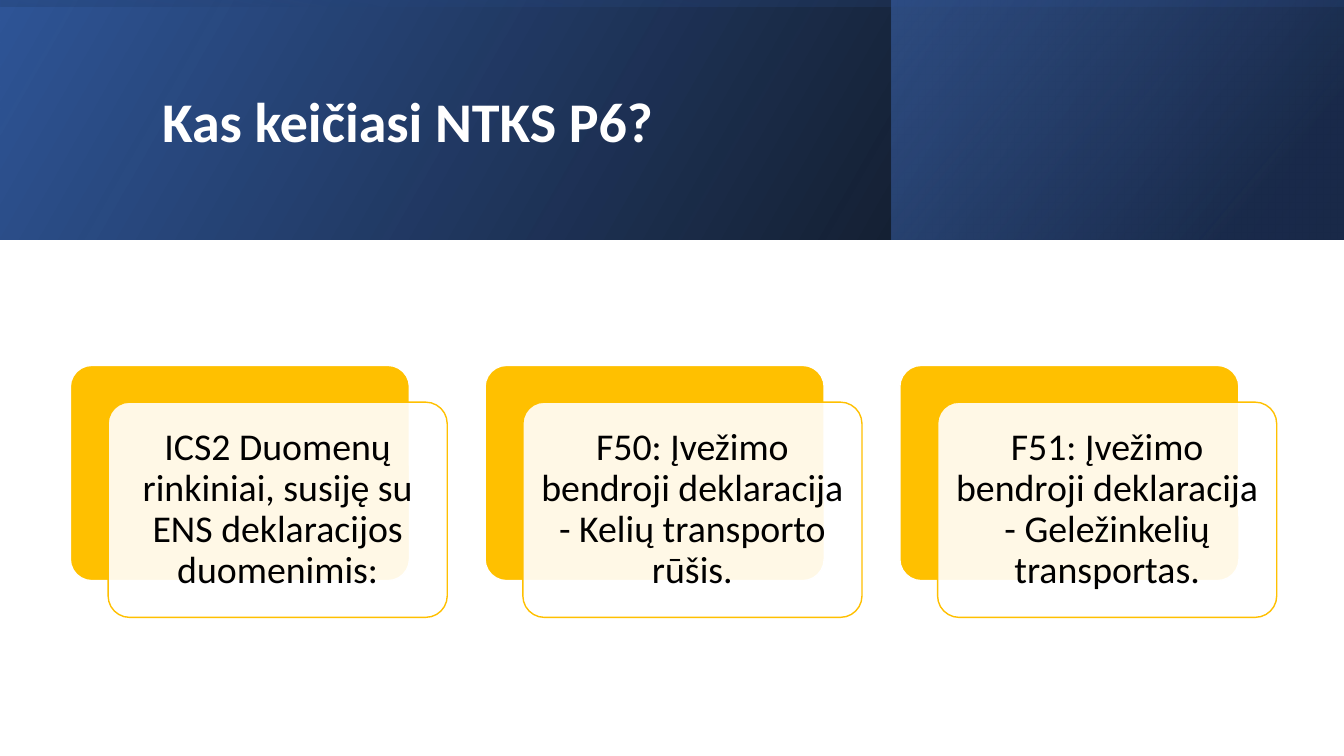
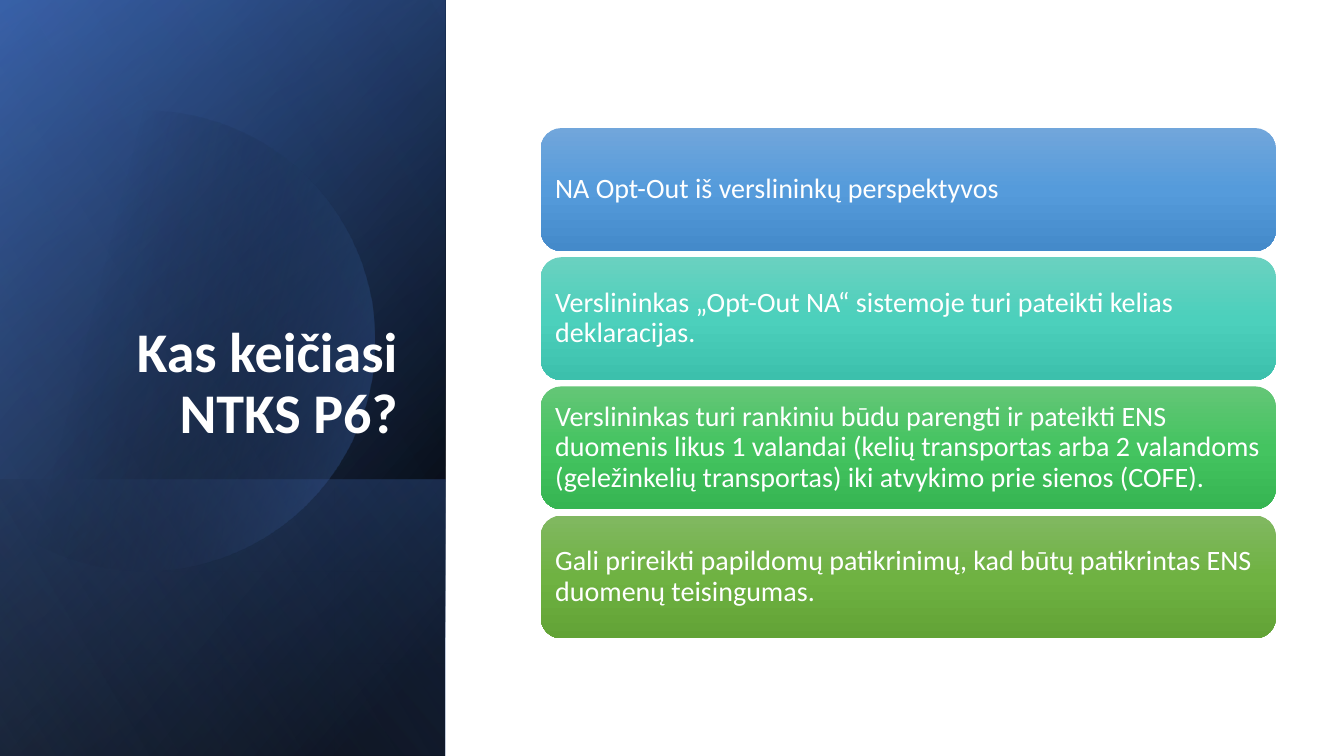
from math import acos, cos, radians, sin

from lxml.etree import SubElement
from pptx import Presentation
from pptx.dml.color import RGBColor
from pptx.enum.shapes import MSO_SHAPE
from pptx.enum.text import MSO_ANCHOR, PP_ALIGN
from pptx.oxml import parse_xml
from pptx.oxml.ns import nsdecls, qn
from pptx.util import Pt

# Shared look
UNIT = 9525  # EMU in one px
WIDE, HIGH = 1280, 720
FONT = "Calibri"
WHITE, BLACK, GOLD = "FFFFFF", "000000", "FFC000"
NAVY, BLUE, DEEP, PALE = "2F5597", "4472C4", "203864", "8FAADC"
HEAD = {"size": Pt(40), "bold": True}
TITLE = "Kas keičiasi NTKS P6?"

# Slide content
CARDS = [
    "ICS2 Duomenų rinkiniai, susiję su ENS deklaracijos duomenimis:",
    "F50: Įvežimo bendroji deklaracija - Kelių transporto rūšis.",
    "F51: Įvežimo bendroji deklaracija - Geležinkelių transportas.",
]
ROWS = [
    ("NA Opt-Out iš verslininkų perspektyvos",
     ("71A6DB", "559BDB", "448ACA")),
    ("Verslininkas „Opt-Out NA“ sistemoje turi pateikti kelias deklaracijas.",
     ("6AD1C0", "4CD0BC", "3CC0AC")),
    ("Verslininkas turi rankiniu būdu parengti ir pateikti ENS duomenis likus "
     "1 valandai (kelių transportas arba 2 valandoms (geležinkelių "
     "transportas) iki atvykimo prie sienos (COFE).",
     ("64C677", "44C460", "36B552")),
    ("Gali prireikti papildomų patikrinimų, kad būtų patikrintas ENS duomenų "
     "teisingumas.",
     ("81B861", "6FB242", "62A336")),
]


def px(*vals):
    return [round(v * UNIT) for v in vals]


def tint(hue):
    return RGBColor.from_string(hue)


# Fills
def solid(shape, hue, alpha=100):
    shape.fill.solid()
    shape.fill.fore_color.rgb = tint(hue)
    if alpha < 100:
        clr = shape._element.spPr.find(qn("a:solidFill"))[0]
        SubElement(clr, qn("a:alpha"), val=str(alpha * 1000))


def fade(shape, stops, angle):
    """Gradient fill; each stop is (position %, colour, opacity %)."""
    marks = "".join(
        f'<a:gs pos="{pos * 1000}"><a:srgbClr val="{hue}">'
        f'<a:alpha val="{alpha * 1000}"/></a:srgbClr></a:gs>'
        for pos, hue, alpha in stops)
    shape.fill.background()
    props = shape._element.spPr
    props.replace(props.find(qn("a:noFill")), parse_xml(
        f'<a:gradFill {nsdecls("a")} rotWithShape="1"><a:gsLst>{marks}</a:gsLst>'
        f'<a:lin ang="{angle * 60000}" scaled="0"/></a:gradFill>'))


def edge(shape, hue=None):
    shape.shadow.inherit = False
    if hue:
        shape.line.color.rgb = tint(hue)
        shape.line.width = Pt(1)
    else:
        shape.line.fill.background()


# Text
def write(shape, text, hue, look, align=PP_ALIGN.LEFT,
          anchor=MSO_ANCHOR.MIDDLE, pad=None):
    frame = shape.text_frame
    form = {"word_wrap": True, "vertical_anchor": anchor}
    if pad is not None:
        sides = ("left", "top", "right", "bottom")
        form.update({f"margin_{side}": px(pad)[0] for side in sides})
    para = frame.paragraphs[0]
    run = para.add_run()
    run.text = text
    run.font.color.rgb = tint(hue)
    for item, vals in (
            (frame, form),
            (para, {"alignment": align, "line_spacing": 0.9}),
            (run.font, {"name": FONT, **look})):
        for key, val in vals.items():
            setattr(item, key, val)


def title(slide, box, **place):
    write(slide.shapes.add_textbox(*px(*box)), TITLE, WHITE, HEAD, **place)


# Shapes
def band(slide, box, turn, stops, angle):
    """Mirrored gradient panel that covers box after its turn."""
    x, y, w, h = box
    if turn:
        x, y, w, h = x + (w - h) / 2, y + (h - w) / 2, h, w
    shape = slide.shapes.add_shape(MSO_SHAPE.RECTANGLE, *px(x, y, w, h))
    shape.rotation = turn
    shape._element.spPr.xfrm.set("flipH", "1")
    fade(shape, stops, angle)
    edge(shape)


def disc(slide, x, y, r, stops, angle):
    """Circle cut off by the left edge of the slide."""
    end = acos(-x / r)
    turns = [end * (i / 60 - 1) for i in range(121)]
    dots = [px(x + r * cos(t), y + r * sin(t)) for t in turns]
    pen = slide.shapes.build_freeform(*dots[0])
    pen.add_line_segments(dots[1:], close=True)
    shape = pen.convert_to_shape()
    fade(shape, stops, angle)
    edge(shape)


def round_box(slide, box, curve=None):
    shape = slide.shapes.add_shape(MSO_SHAPE.ROUNDED_RECTANGLE, *px(*box))
    if curve:
        shape.adjustments[0] = curve
    return shape


def card(slide, x, y, text):
    w, h = 323, 205
    back = round_box(slide, (x, y, w, h), 0.1)
    solid(back, GOLD)
    edge(back, WHITE)
    front = round_box(slide, (x + 36, y + 35, w, h), 0.1)
    solid(front, WHITE, 90)
    edge(front, GOLD)
    write(front, text, BLACK, {"size": Pt(27)}, PP_ALIGN.CENTER, pad=10)


def row(slide, box, text, hues):
    shape = round_box(slide, box)
    fade(shape, [(50 * i, hue, 100) for i, hue in enumerate(hues)], 90)
    edge(shape)
    write(shape, text, WHITE, {"size": Pt(20)}, pad=8)


# Slides
def card_slide(slide):
    top = (0, 0, WIDE, 228)
    band(slide, top, 0, [(0, BLACK, 96), (100, NAVY, 100)], 330)
    band(slide, (849, 0, WIDE - 849, 228), 0,
         [(19, DEEP, 68), (100, BLUE, 48)], 320)
    band(slide, top, 270, [(23, NAVY, 16), (99, BLACK, 45)], 350)
    title(slide, (145, 36, 1020, 165))
    for i, text in enumerate(CARDS):
        card(slide, 67 + 395 * i, 348, text)


def row_slide(slide):
    side = (0, 0, 424, HIGH)
    band(slide, side, 90, [(8, BLACK, 100), (100, NAVY, 100)], 50)
    band(slide, side, 90, [(0, BLACK, 0), (99, BLUE, 46)], 30)
    band(slide, (0, 457, 424, HIGH - 457), 90,
         [(2, BLUE, 29), (100, BLACK, 30)], 130)
    disc(slide, 138, 324, 219, [(29, BLACK, 0), (100, BLUE, 43)], 14)
    band(slide, side, 90, [(0, BLACK, 0), (99, PALE, 11)], 120)
    title(slide, (61, 177, 327, 252), align=PP_ALIGN.RIGHT,
          anchor=MSO_ANCHOR.BOTTOM)
    high, gap = 117, 6
    for i, (text, hues) in enumerate(ROWS):
        row(slide, (515, 122 + (high + gap) * i, 700, high), text, hues)


def main():
    deck = Presentation()
    deck.slide_width, deck.slide_height = px(WIDE, HIGH)
    for fill in (card_slide, row_slide):
        fill(deck.slides.add_slide(deck.slide_layouts[6]))
    deck.save("out.pptx")


if __name__ == "__main__":
    main()
